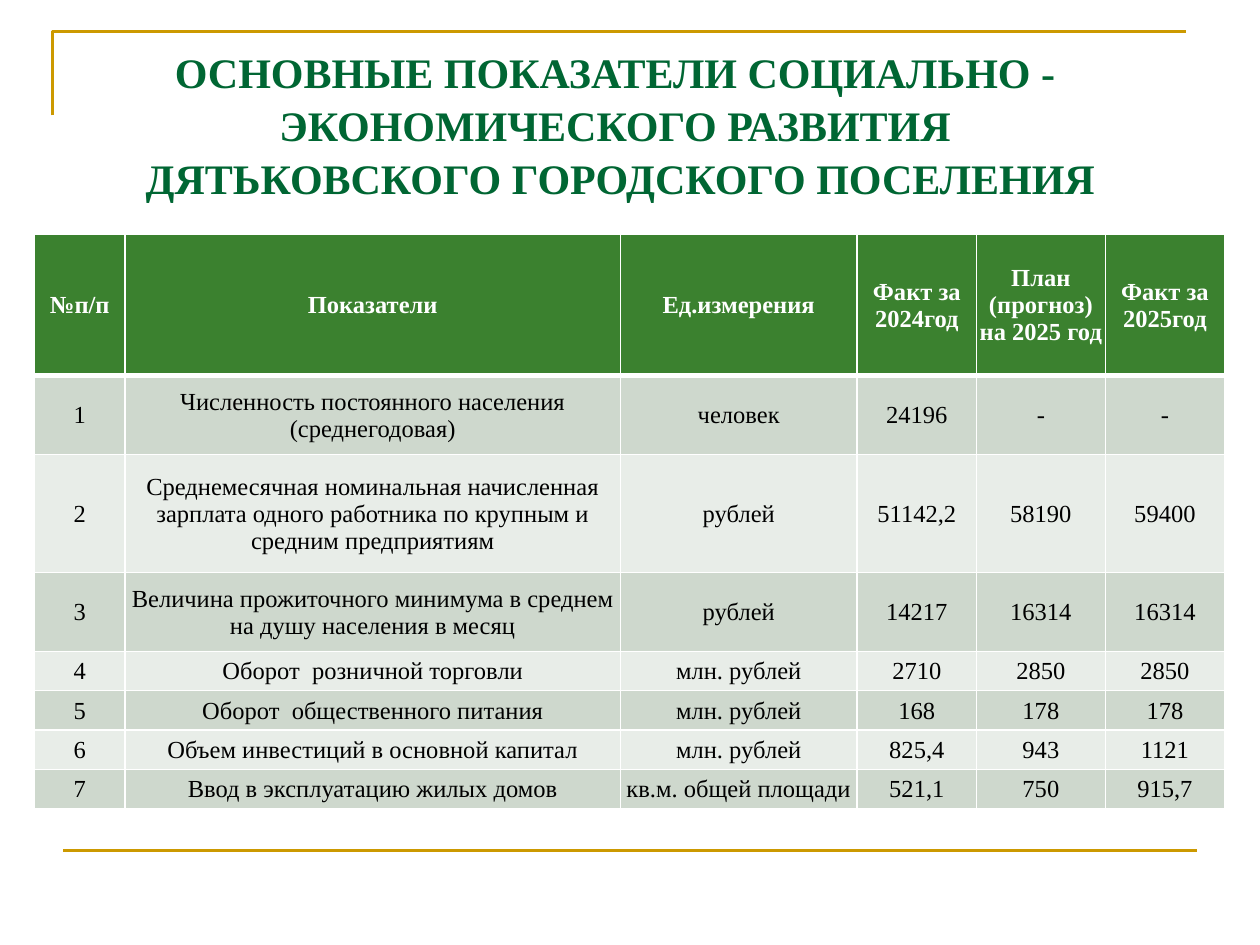
from lxml.etree import SubElement
from pptx import Presentation
from pptx.dml.color import RGBColor
from pptx.enum.shapes import MSO_CONNECTOR
from pptx.enum.text import MSO_ANCHOR as Anchor, PP_ALIGN as Align
from pptx.oxml.ns import qn
from pptx.util import Pt

COLORS = {
    "gold": "CC9900",
    "title": "006633",
    "header": "3B812F",
    "odd": "CED8CD",
    "even": "E8EDE8",
    "white": "FFFFFF",
    "black": "000000",
}
FONT = "Times New Roman"
TITLE = ("ОСНОВНЫЕ ПОКАЗАТЕЛИ СОЦИАЛЬНО - ЭКОНОМИЧЕСКОГО РАЗВИТИЯ\v"
         " ДЯТЬКОВСКОГО ГОРОДСКОГО ПОСЕЛЕНИЯ")
COLUMN_WIDTHS = [51.84, 282.96, 135.36, 68.2, 73.6, 68.2]
ROW_HEIGHTS = [80.64, 45.1, 67.4, 45.1] + [22.5] * 4
INDICATORS = [
    ["№п/п", "Показатели", "Ед.измерения", "Факт за 2024год",
     "План (прогноз) на 2025 год", "Факт за 2025год"],
    ["1", "Численность постоянного населения (среднегодовая)", "человек",
     "24196", "-", "-"],
    ["2", "Среднемесячная номинальная начисленная зарплата одного работника "
     "по крупным и средним предприятиям", "рублей",
     "51142,2", "58190", "59400"],
    ["3", "Величина прожиточного минимума в среднем на душу населения в месяц",
     "рублей", "14217", "16314", "16314"],
    ["4", "Оборот  розничной торговли", "млн. рублей", "2710", "2850", "2850"],
    ["5", "Оборот  общественного питания", "млн. рублей", "168", "178", "178"],
    ["6", "Объем инвестиций в основной капитал", "млн. рублей",
     "825,4", "943", "1121"],
    ["7", "Ввод в эксплуатацию жилых домов", "кв.м. общей площади",
     "521,1", "750", "915,7"],
]


def rgb(name):
    return RGBColor.from_string(COLORS[name])


def style_line(shape):
    shape.line.color.rgb = rgb("gold")
    shape.line.width = Pt(1.5)


def style_text(frame, size, color, bold):
    for paragraph in frame.paragraphs:
        paragraph.alignment = Align.CENTER
        for span in paragraph.runs:
            span.font.name = FONT
            span.font.size = Pt(size)
            span.font.bold = bold
            span.font.color.rgb = rgb(color)


def add_corner(page, left, top, right, bottom):
    builder = page.shapes.build_freeform(Pt(left), Pt(bottom))
    builder.add_line_segments(
        [(Pt(left), Pt(top)), (Pt(right), Pt(top))], close=False)
    corner = builder.convert_to_shape()
    corner.shadow.inherit = False
    corner.fill.background()
    style_line(corner)


def add_rule(page, left, right, y):
    rule = page.shapes.add_connector(
        MSO_CONNECTOR.STRAIGHT, Pt(left), Pt(y), Pt(right), Pt(y))
    style_line(rule)
    SubElement(rule._element.spPr, qn("a:effectLst"))


def add_title(page, left, top, width, height):
    box = page.shapes.add_textbox(Pt(left), Pt(top), Pt(width), Pt(height))
    frame = box.text_frame
    frame.word_wrap = True
    frame.text = TITLE
    frame.paragraphs[0].line_spacing = 1.05
    style_text(frame, 24, "title", True)


def set_borders(cell, widths):
    properties = cell._tc.get_or_add_tcPr()
    for position, (side, width) in enumerate(widths.items()):
        border = properties.makeelement(qn(f"a:{side}"), {"w": str(Pt(width))})
        fill = SubElement(border, qn("a:solidFill"))
        SubElement(fill, qn("a:srgbClr"), val=COLORS["white"])
        properties.insert(position, border)


def style_cell(cell, row):
    is_header = row == 0
    cell.vertical_anchor = Anchor.MIDDLE
    cell.margin_left = cell.margin_right = cell.margin_top = Pt(0.7)
    cell.margin_bottom = Pt(0)
    cell.fill.solid()
    cell.fill.fore_color.rgb = rgb(
        "header" if is_header else "odd" if row % 2 else "even")
    style_text(cell.text_frame, 14, "white" if is_header else "black", is_header)
    set_borders(cell, {"lnL": 1, "lnR": 1,
                       "lnT": 3 if row == 1 else 1,
                       "lnB": 3 if is_header else 1})


def add_indicator_table(page, left, top):
    table = page.shapes.add_table(
        len(ROW_HEIGHTS), len(COLUMN_WIDTHS), Pt(left), Pt(top),
        Pt(sum(COLUMN_WIDTHS)), Pt(sum(ROW_HEIGHTS))).table
    for column, width in zip(table.columns, COLUMN_WIDTHS):
        column.width = Pt(width)
    for row, height in zip(table.rows, ROW_HEIGHTS):
        row.height = Pt(height)
    for row, values in enumerate(INDICATORS):
        for column, value in enumerate(values):
            cell = table.cell(row, column)
            cell.text_frame.text = value
            style_cell(cell, row)


def main():
    deck = Presentation()
    deck.slide_width, deck.slide_height = Pt(720), Pt(540)
    page = deck.slides.add_slide(deck.slide_layouts[6])
    add_corner(page, left=30, top=18, right=678, bottom=66)
    add_rule(page, left=36, right=684, y=486)
    add_indicator_table(page, left=19.7, top=134)
    add_title(page, left=31, top=21.6, width=641, height=72.7)
    deck.save("out.pptx")


if __name__ == "__main__":
    main()
